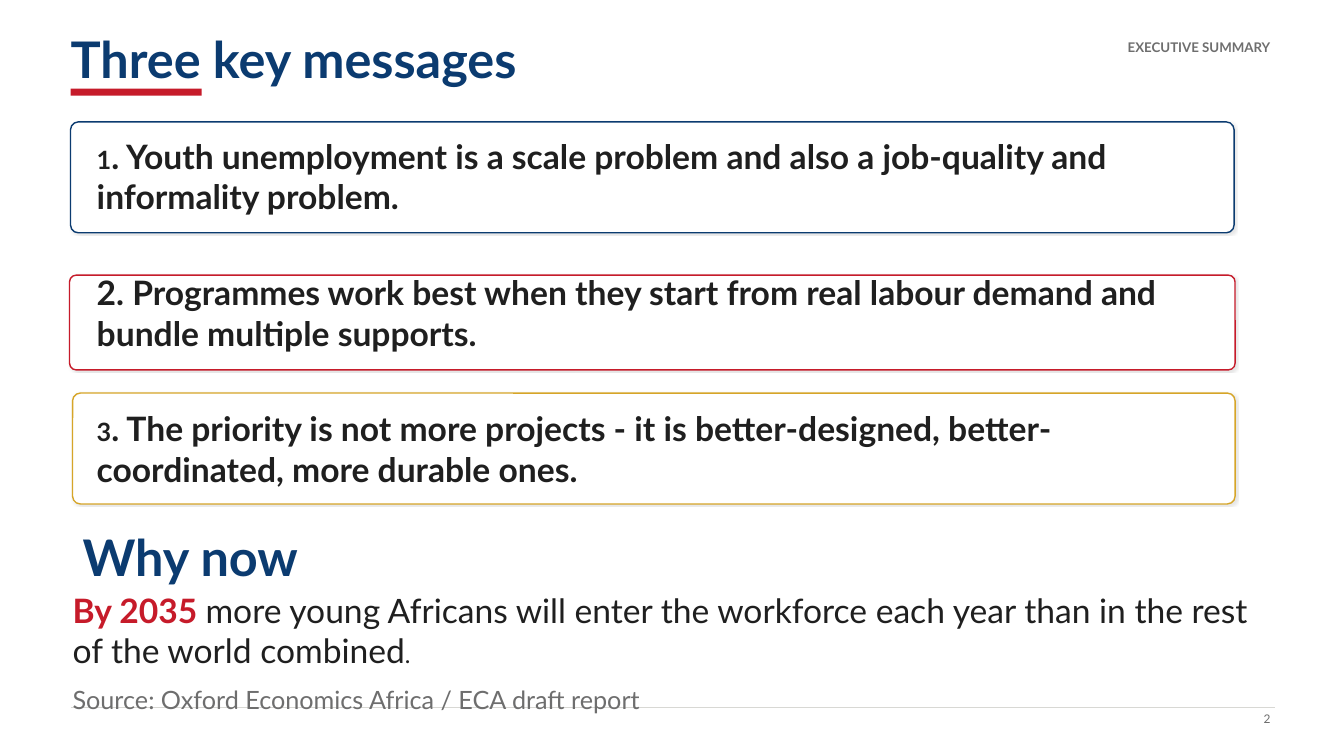
from dataclasses import dataclass

from lxml.etree import SubElement
from pptx import Presentation
from pptx.dml.color import RGBColor
from pptx.enum.shapes import MSO_CONNECTOR, MSO_SHAPE
from pptx.enum.text import MSO_ANCHOR, PP_ALIGN
from pptx.oxml.ns import qn
from pptx.util import Emu, Pt

PX = 9144  # EMU per px, 100 px to the inch
FONT = "Lato"
COLORS = {
    "navy": "0B3B70",
    "red": "C61B2A",
    "gold": "D6A528",
    "ink": "1F1F1F",
    "grey": "6E6E6E",
    "rule": "D8D8D4",
    "white": "FFFFFF",
    "black": "000000",
}


@dataclass(frozen=True)
class Box:
    left: int
    top: int
    width: int
    height: int

    def emu(self) -> list[Emu]:
        return [px(v) for v in (self.left, self.top, self.width, self.height)]


@dataclass(frozen=True)
class Run:
    text: str
    size: float
    color: str = "ink"
    bold: bool = False


@dataclass(frozen=True)
class Message:
    card: Box
    text_box: Box
    color: str
    number_size: int
    number: str
    text: str


MESSAGES = [
    Message(Box(70, 121, 1154, 110), Box(96, 128, 1056, 94), "navy", 18, "1",
            ". Youth unemployment is a scale problem and also a job-quality "
            "and informality problem."),
    Message(Box(69, 273, 1156, 94), Box(96, 263, 1100, 94), "red", 24, "2",
            ". Programmes work best when they start from real labour demand "
            "and bundle multiple supports."),
    Message(Box(72, 390, 1153, 110), Box(96, 398, 1100, 94), "gold", 18, "3",
            ". The priority is not more projects - it is better-designed, "
            "better-coordinated, more durable ones."),
]


def px(value: int) -> Emu:
    return Emu(value * PX)


def rgb(name: str) -> RGBColor:
    return RGBColor.from_string(COLORS[name])


def add_runs(slide, box: Box, runs: list[Run], align=PP_ALIGN.LEFT) -> None:
    """Add a text box without insets, holding one paragraph of formatted runs."""
    tf = slide.shapes.add_textbox(*box.emu()).text_frame
    tf.word_wrap = True
    tf.vertical_anchor = MSO_ANCHOR.MIDDLE
    tf.margin_left = tf.margin_top = tf.margin_right = tf.margin_bottom = 0
    p = tf.paragraphs[0]
    p.alignment = align
    for run in runs:
        r = p.add_run()
        r.text = run.text
        r.font.name = FONT
        r.font.size = Pt(run.size)
        r.font.bold = run.bold
        r.font.color.rgb = rgb(run.color)


def add_text(slide, box: Box, text: str, *, size: float, color: str = "ink",
             bold: bool = False, align=PP_ALIGN.LEFT) -> None:
    add_runs(slide, box, [Run(text, size, color, bold)], align)


def add_soft_shadow(sp) -> None:
    effects = SubElement(sp._element.spPr, qn("a:effectLst"))
    shadow = SubElement(effects, qn("a:outerShdw"), blurRad=str(Pt(1)),
                        dist=str(Pt(1)), dir=str(45 * 60000),
                        algn="tl", rotWithShape="0")
    color = SubElement(shadow, qn("a:srgbClr"), val=COLORS["black"])
    SubElement(color, qn("a:alpha"), val="10000")


def add_message(slide, message: Message) -> None:
    sp = slide.shapes.add_shape(MSO_SHAPE.ROUNDED_RECTANGLE, *message.card.emu())
    sp.adjustments[0] = 0.07
    sp.fill.solid()
    sp.fill.fore_color.rgb = rgb("white")
    sp.line.color.rgb = rgb(message.color)
    sp.line.width = Pt(1)
    add_soft_shadow(sp)
    add_runs(slide, message.text_box, [
        Run(message.number, message.number_size, bold=True),
        Run(message.text, 24, bold=True),
    ])


def add_accent_bar(slide, box: Box) -> None:
    sp = slide.shapes.add_shape(MSO_SHAPE.RECTANGLE, *box.emu())
    sp.shadow.inherit = False
    sp.fill.solid()
    sp.fill.fore_color.rgb = rgb("red")
    sp.line.fill.background()


def add_footer_rule(slide, left: int, right: int, y: int) -> None:
    line = slide.shapes.add_connector(
        MSO_CONNECTOR.STRAIGHT, px(left), px(y), px(right), px(y))
    line.line.color.rgb = rgb("rule")
    line.line.width = Pt(1)
    SubElement(line._element.spPr, qn("a:effectLst"))


def main() -> None:
    prs = Presentation()
    prs.slide_width, prs.slide_height = px(1333), px(750)
    slide = prs.slides.add_slide(prs.slide_layouts[6])

    add_text(slide, Box(70, 35, 850, 45), "Three key messages",
             size=36, color="navy", bold=True)
    add_accent_bar(slide, Box(70, 88, 130, 7))
    add_text(slide, Box(1030, 37, 230, 20), "EXECUTIVE SUMMARY",
             size=9.5, color="grey", bold=True, align=PP_ALIGN.RIGHT)

    for message in MESSAGES:
        add_message(slide, message)

    add_text(slide, Box(82, 535, 310, 34), "Why now",
             size=36, color="navy", bold=True)
    add_runs(slide, Box(72, 585, 1178, 80), [
        Run("By 2035 ", 24, "red", True),
        Run("more young Africans will enter the workforce each year "
            "than in the rest of the world combined", 24),
        Run(".", 17),
    ])

    add_footer_rule(slide, 70, 1265, 702)
    add_text(slide, Box(72, 662, 810, 63),
             "Source: Oxford Economics Africa / ECA draft report",
             size=18, color="grey")
    add_text(slide, Box(1225, 703, 35, 20), "2",
             size=8.5, color="grey", align=PP_ALIGN.RIGHT)

    prs.save("out.pptx")


if __name__ == "__main__":
    main()
